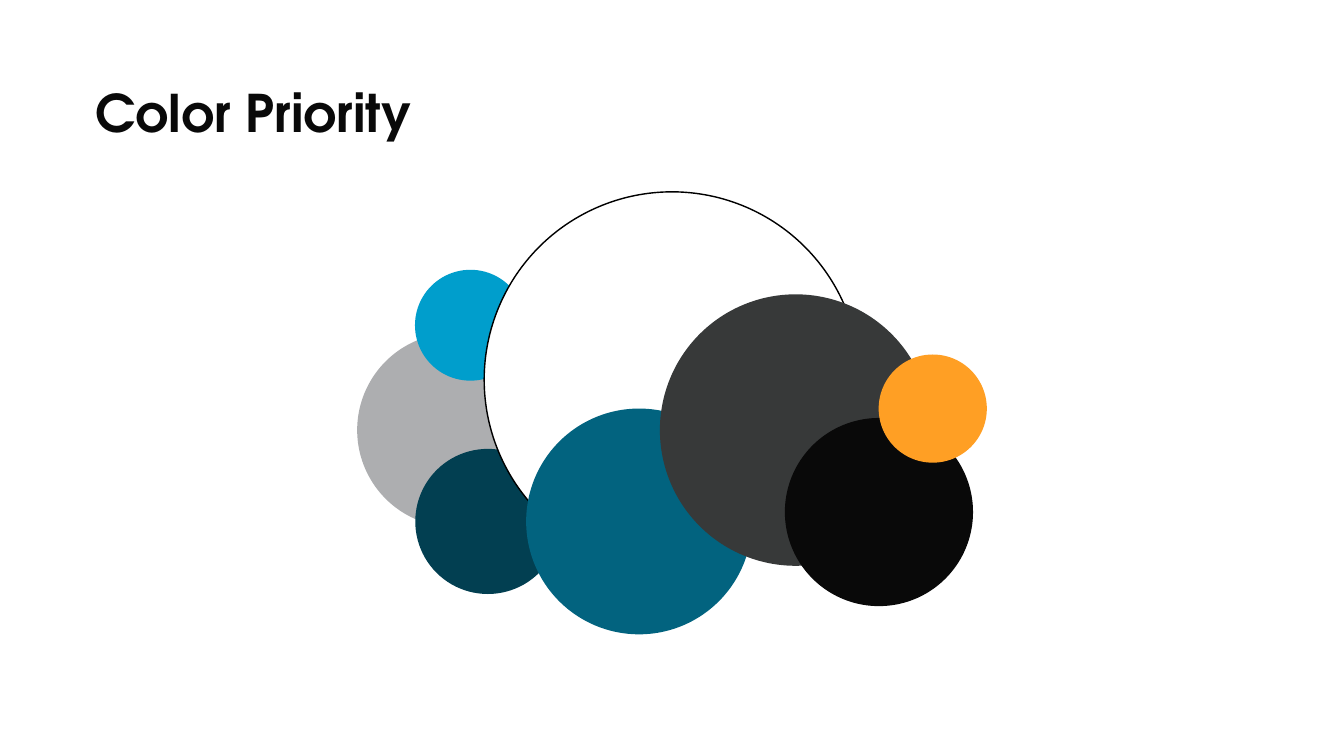
from pptx import Presentation
from pptx import util as u
from pptx.dml.color import RGBColor
from pptx.enum import shapes, text

COLUMN = ROW = u.Inches(1)
COLUMNS, ROWS = 20, 11.25

COLORS = {
    "white": "FFFFFF",
    "outline": "000000",
    "black": "090909",
    "charcoal": "373939",
    "gray": "ADAEB0",
    "sky": "009ECC",
    "teal": "02637F",
    "navy": "023F51",
    "orange": "FF9F24",
}

# Back to front: color, center column, center row, diameter, outline color
PRIORITIES = [
    ("gray", 6.76, 6.4, 2.89, None),
    ("sky", 7, 4.84, 1.65, None),
    ("navy", 7.26, 7.76, 2.16, None),
    ("white", 10, 5.65, 5.59, "outline"),
    ("teal", 9.51, 7.76, 3.36, None),
    ("charcoal", 11.84, 6.4, 4.04, None),
    ("black", 13.08, 7.62, 2.8, None),
    ("orange", 13.88, 6.08, 1.61, None),
]


def rgb(color):
    """Return the palette color of the given name."""
    return RGBColor.from_string(COLORS[color])


def grid(column, row, columns, rows):
    """Convert a grid position and span to left, top, width and height."""
    return (u.Emu(round(column * COLUMN)), u.Emu(round(row * ROW)),
            u.Emu(round(columns * COLUMN)), u.Emu(round(rows * ROW)))


def add_title(slide, wording):
    """Add the heading above the circles."""
    heading = slide.shapes.add_textbox(*grid(1.42, 1.39, 5.4, 0.77))
    frame = heading.text_frame
    frame.word_wrap = True
    frame.auto_size = text.MSO_AUTO_SIZE.SHAPE_TO_FIT_TEXT
    frame.margin_left = frame.margin_right = 0
    frame.margin_top = frame.margin_bottom = 0
    line = frame.paragraphs[0]
    line.line_spacing = u.Pt(52.7)
    words = line.add_run()
    words.text = wording
    words.font.name = "TeX Gyre Adventor"
    words.font.size = u.Pt(55.5)
    words.font.bold = True
    words.font.color.rgb = rgb("black")


def add_circle(slide, color, column, row, diameter, outline):
    """Add a color circle around its center."""
    radius = diameter / 2
    circle = slide.shapes.add_shape(
        shapes.MSO_SHAPE.OVAL,
        *grid(column - radius, row - radius, diameter, diameter))
    circle.shadow.inherit = False
    circle.fill.solid()
    circle.fill.fore_color.rgb = rgb(color)
    if outline:
        circle.line.color.rgb = rgb(outline)
        circle.line.width = u.Pt(1.5)
    else:
        circle.line.fill.background()


def main():
    """Build the color priority slide."""
    deck = Presentation()
    deck.slide_width, deck.slide_height = grid(0, 0, COLUMNS, ROWS)[2:]
    slide = deck.slides.add_slide(deck.slide_layouts[6])
    slide.background.fill.solid()
    slide.background.fill.fore_color.rgb = rgb("white")
    add_title(slide, "Color Priority")
    for priority in PRIORITIES:
        add_circle(slide, *priority)
    deck.save("out.pptx")


if __name__ == "__main__":
    main()
